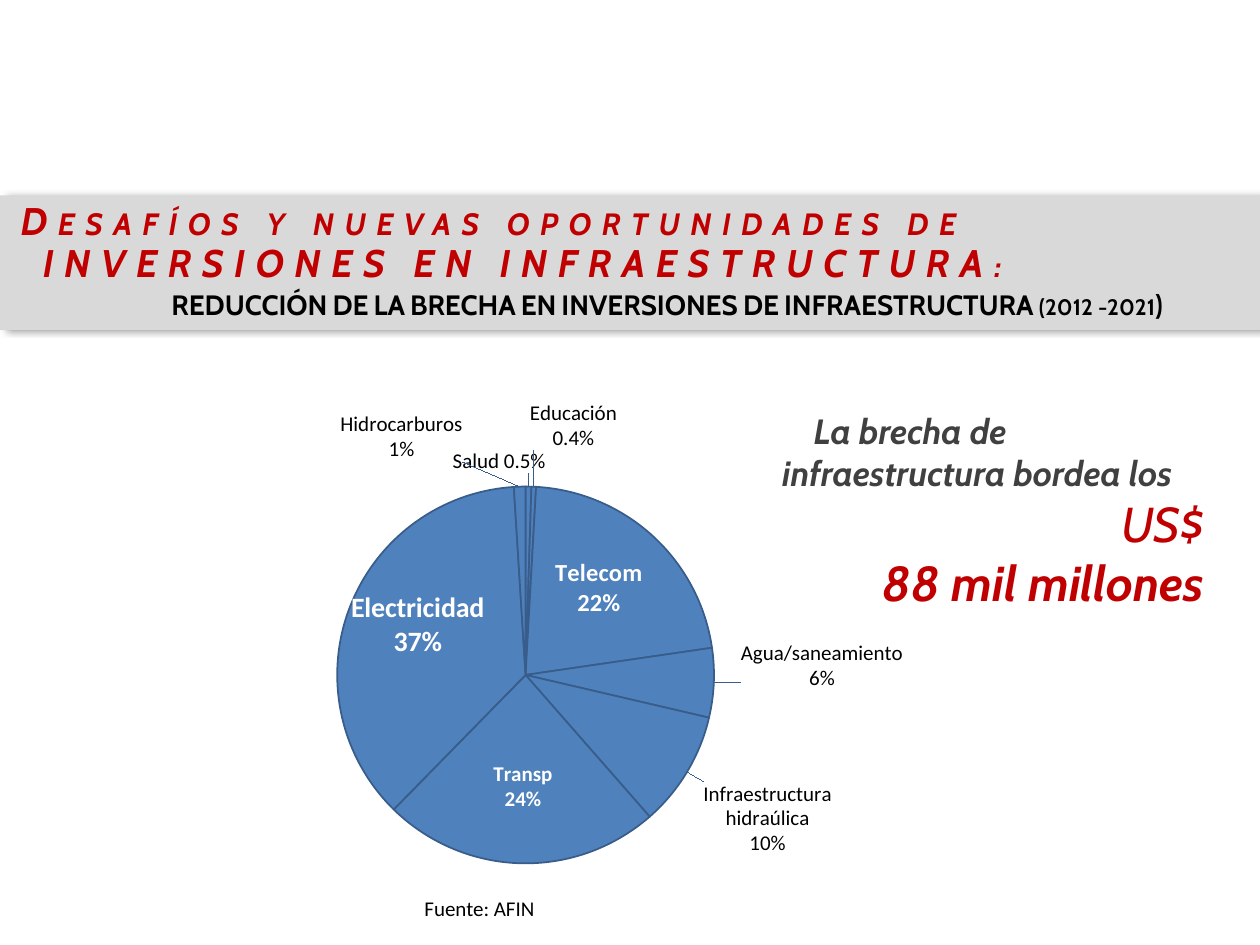
from pptx import Presentation
from pptx.chart.data import CategoryChartData
from pptx.dml.color import RGBColor
from pptx.enum import chart as chart_enum, text as text_enum
from pptx.oxml import parse_xml
from pptx.oxml.ns import nsdecls
from pptx.util import Inches, Pt

Align = text_enum.PP_ALIGN
Place = chart_enum.XL_LABEL_POSITION

THEME = {
    "heading": "Cabin", "body": "Calibri",
    "red": "C00000", "gray": "404040", "band": "D9D9D9",
    "black": "000000", "white": "FFFFFF", "slice": "4F81BD", "edge": "385D8A",
    "title": 22, "subtitle": 16, "bracket": 20, "claim": 20, "amount": 28, "label": 12,
}

# Content: title lines as (alignment, left margin, indent, runs of (text, size, colour))
TITLE = [
    (Align.CENTER, 0.88, -0.29, [("Desafíos y nuevas oportunidades de", "title", "red")]),
    (Align.LEFT, 0.24, 0, [("INVERSIONES EN INFRAESTRUCTURA:", "title", "red")]),
    (Align.CENTER, 0.88, -0.29, [
        ("REDUCCIÓN DE LA BRECHA EN INVERSIONES DE INFRAESTRUCTURA (2012 -2021", "subtitle", "black"),
        (")", "bracket", "black")]),
]

# Claim lines: text, size, colour, bold, alignment, left margin
CLAIM = [
    ("La brecha de", "claim", "gray", True, Align.LEFT, 0.25),
    ("infraestructura bordea los", "claim", "gray", True, Align.LEFT, 0),
    ("US$", "amount", "red", False, Align.RIGHT, 0),
    ("88 mil millones", "amount", "red", True, Align.RIGHT, 0),
]

# Slices: category, value, label, inside size (None = outside), label offset
SLICES = [
    ("Salud", 0.5, "Salud 0.5%", None, (-0.03, -0.01)),
    ("Educación", 0.4, "Educación\n0.4%", None, (0.04, -0.05)),
    ("Telecomunicaciones", 22, "Telecom\n22%", 14, (0.01, -0.03)),
    ("Agua y saneamiento", 6, "Agua/saneamiento\n6%", None, (0.02, -0.03)),
    ("Infraestructura hidraulica", 10, "Infraestructura hidraúlica\n10%", None, (0.01, 0.01)),
    ("Transporte", 24, "Transp\n24%", 12, (0, 0.03)),
    ("Electricidad", 37, "Electricidad\n37%", 16, (-0.02, -0.03)),
    ("Hidrocarburos", 1, "Hidrocarburos\n1%", None, (-0.12, -0.03)),
]
SOURCE = "Fuente: AFIN"


def color(name):
    return RGBColor.from_string(THEME[name])


def style(font, face, size, tint, bold=False, italic=False):
    font.name, font.size, font.bold, font.italic = THEME[face], Pt(size), bold, italic
    font.color.rgb = color(tint)


def indent(para, left, first=0):
    properties = para._p.get_or_add_pPr()
    properties.set("marL", str(Inches(left)))
    properties.set("indent", str(Inches(first)))


def place(shape, left, top, width, height):
    shape.left, shape.top = Inches(left), Inches(top)
    shape.width, shape.height = Inches(width), Inches(height)


def paragraphs(frame, count):
    return [frame.paragraphs[0]] + [frame.add_paragraph() for _ in range(count - 1)]


def manual_layout(path_x, path_y, plot=False, width=0, height=0):
    tags = [("x", path_x), ("y", path_y)]
    if plot:
        tags = ([("layoutTarget", "inner"), ("xMode", "edge"), ("yMode", "edge")]
                + tags + [("w", width), ("h", height)])
    inner = "".join(f'<c:{tag} val="{value}"/>' for tag, value in tags)
    return parse_xml(f'<c:layout {nsdecls("c")}><c:manualLayout>{inner}</c:manualLayout></c:layout>')


def add_pie(page):
    data = CategoryChartData(number_format="General")
    data.categories = [row[0] for row in SLICES]
    data.add_series("Series 1", [row[1] for row in SLICES])
    chart = page.shapes.add_chart(
        chart_enum.XL_CHART_TYPE.PIE, Inches(0.12), Inches(2.8), Inches(7.8), Inches(4.56), data).chart
    chart.has_legend = chart.has_title = False
    style(chart.font, "body", 10, "black")

    plot = chart.plots[0]
    plot.vary_by_categories = False
    area = chart._chartSpace.chart.plotArea
    for old in area.findall("{*}layout"):
        area.remove(old)
    area.insert(0, manual_layout(0.12, 0.233, True, 0.799, 0.656))

    series = plot.series[0]
    series.format.fill.solid()
    series.format.fill.fore_color.rgb = color("slice")
    series.format.line.color.rgb = color("edge")
    series.format.line.width = Pt(1)

    labels = series.data_labels
    labels.show_value = False
    labels.show_percentage = labels.show_category_name = True
    labels.number_format, labels.number_format_is_linked = "0%", False
    style(labels.font, "body", THEME["label"], "black")
    for index, (_, _, words, inside, offset) in enumerate(SLICES):
        label = series.points[index].data_label
        label.text_frame.text = words
        for para in label.text_frame.paragraphs:
            for span in para.runs:
                style(span.font, "body", inside or THEME["label"],
                      "white" if inside else "black", bool(inside))
        label.position = Place.CENTER if inside else Place.OUTSIDE_END
        label._dLbl.insert(1, manual_layout(*offset))


def add_band(page):
    band = page.shapes.title
    place(band, 0, 1.55, 10, 1.07)
    band.fill.solid()
    band.fill.fore_color.rgb = color("band")
    band._element.spPr.append(parse_xml(
        f'<a:effectLst {nsdecls("a")}><a:outerShdw blurRad="{Pt(4)}" dist="{Pt(3)}" dir="0">'
        '<a:srgbClr val="000000"><a:alpha val="40000"/></a:srgbClr></a:outerShdw></a:effectLst>'))
    frame = band.text_frame
    frame.word_wrap = True
    frame.auto_size = text_enum.MSO_AUTO_SIZE.NONE
    frame.vertical_anchor = text_enum.MSO_ANCHOR.MIDDLE
    for para, (align, left, first, runs) in zip(paragraphs(frame, len(TITLE)), TITLE):
        para.alignment, para.line_spacing, para.space_before = align, 0.9, Pt(0)
        indent(para, left, first)
        for words, size, tint in runs:
            span = para.add_run()
            span.text = words
            main = size == "title"
            style(span.font, "heading", THEME[size], tint, True, main)
            properties = span._r.get_or_add_rPr()
            properties.set("cap", "small")
            properties.set("spc", "600" if main else "0")


def add_text(page, left, top, width, height):
    frame = page.shapes.add_textbox(Inches(left), Inches(top), Inches(width), Inches(height)).text_frame
    frame.word_wrap = True
    return frame


def main():
    deck = Presentation()
    deck.slide_width, deck.slide_height = Inches(10), Inches(7.5)
    page = deck.slides.add_slide(deck.slide_layouts[5])

    add_pie(page)

    # Claim beside the pie
    frame = add_text(page, 6.11, 3.2, 3.54, 1.25)
    for para, (words, size, tint, bold, align, left) in zip(paragraphs(frame, len(CLAIM)), CLAIM):
        para.text, para.alignment = words, align
        indent(para, left)
        style(para.runs[0].font, "heading", THEME[size], tint, bold, True)

    add_band(page)

    # Source line
    frame = add_text(page, 3.27, 7.06, 1.18, 0.3)
    frame.text = SOURCE
    style(frame.paragraphs[0].runs[0].font, "body", THEME["label"], "black")

    deck.save("out.pptx")


if __name__ == "__main__":
    main()
